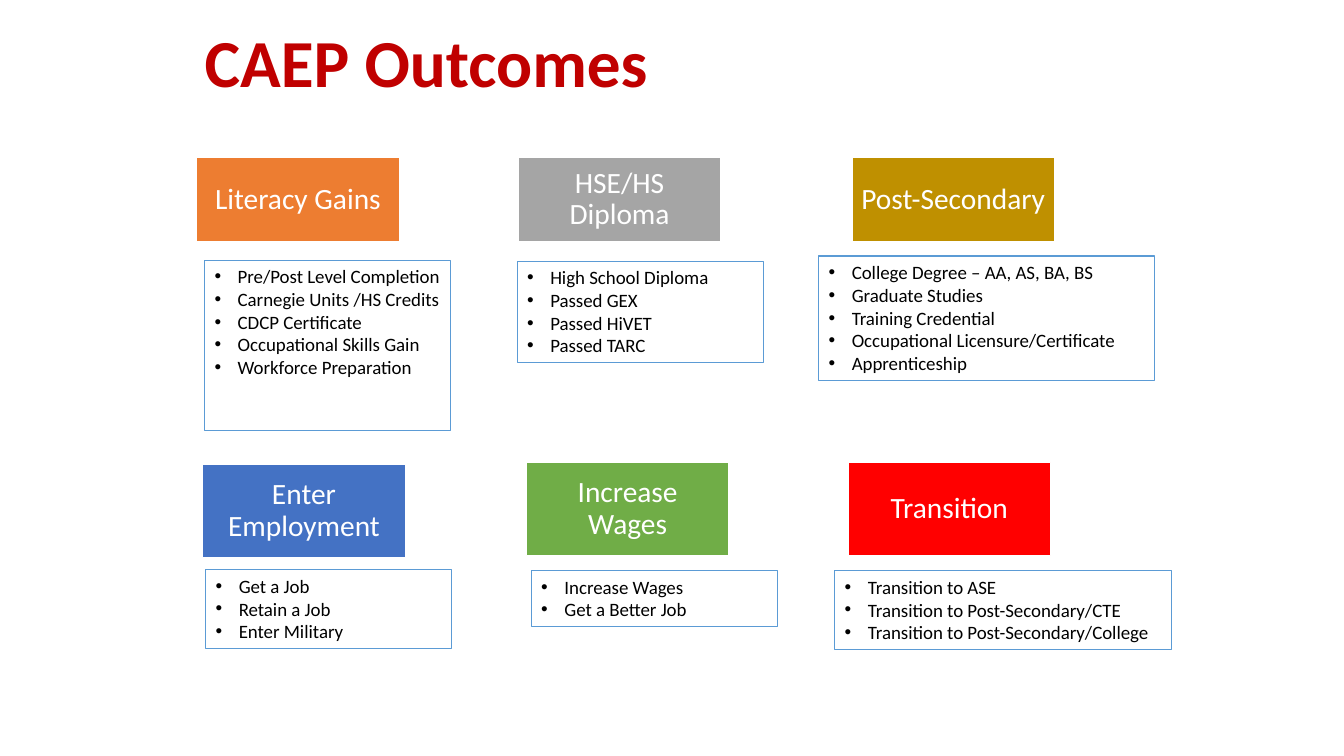
from dataclasses import dataclass

from lxml import etree
from pptx import Presentation
from pptx.dml.color import RGBColor
from pptx.enum.shapes import MSO_SHAPE
from pptx.enum.text import MSO_ANCHOR, MSO_AUTO_SIZE, PP_ALIGN
from pptx.oxml.ns import qn
from pptx.util import Inches, Pt

RECTANGLE = MSO_SHAPE.RECTANGLE
TOP, MIDDLE = MSO_ANCHOR.TOP, MSO_ANCHOR.MIDDLE
LEFT, CENTER = PP_ALIGN.LEFT, PP_ALIGN.CENTER
FIXED_SIZE = MSO_AUTO_SIZE.NONE

WHITE = RGBColor(0xFF, 0xFF, 0xFF)
BLACK = RGBColor(0x00, 0x00, 0x00)
DARK_RED = RGBColor(0xC0, 0x00, 0x00)
ORANGE = RGBColor(0xED, 0x7D, 0x31)
GRAY = RGBColor(0xA5, 0xA5, 0xA5)
GOLD = RGBColor(0xBF, 0x90, 0x00)
BLUE = RGBColor(0x44, 0x72, 0xC4)
GREEN = RGBColor(0x70, 0xAD, 0x47)
RED = RGBColor(0xFF, 0x00, 0x00)
LIGHT_BLUE = RGBColor(0x5B, 0x9B, 0xD5)

FONT = "Calibri"
HEADING_WIDTH = 2.01
BULLET_INDENT = Inches(0.23)


@dataclass(frozen=True)
class Area:
    left: float
    top: float
    width: float
    height: float


@dataclass(frozen=True)
class Outcome:
    heading: str
    color: RGBColor
    heading_area: Area
    measures: tuple[str, ...]
    list_area: Area


OUTCOMES = (
    Outcome("Literacy Gains", ORANGE, Area(1.95, 1.56, HEADING_WIDTH, 0.84),
            ("Pre/Post Level Completion", "Carnegie Units /HS Credits",
             "CDCP Certificate", "Occupational Skills Gain",
             "Workforce Preparation"),
            Area(2.03, 2.58, 2.44, 1.69)),
    Outcome("HSE/HS Diploma", GRAY, Area(5.14, 1.56, HEADING_WIDTH, 0.84),
            ("High School Diploma", "Passed GEX", "Passed HiVET",
             "Passed TARC"),
            Area(5.13, 2.59, 2.44, 1.01)),
    Outcome("Post-Secondary", GOLD, Area(8.45, 1.56, HEADING_WIDTH, 0.84),
            ("College Degree – AA, AS, BA, BS", "Graduate Studies",
             "Training Credential", "Occupational Licensure/Certificate",
             "Apprenticeship"),
            Area(8.12, 2.54, 3.33, 1.24)),
    Outcome("Enter Employment", BLUE, Area(2.01, 4.61, HEADING_WIDTH, 0.92),
            ("Get a Job", "Retain a Job", "Enter Military"),
            Area(2.04, 5.65, 2.44, 0.78)),
    Outcome("Increase Wages", GREEN, Area(5.22, 4.59, HEADING_WIDTH, 0.92),
            ("Increase Wages", "Get a Better Job"),
            Area(5.27, 5.66, 2.44, 0.56)),
    Outcome("Transition", RED, Area(8.41, 4.59, HEADING_WIDTH, 0.92),
            ("Transition to ASE", "Transition to Post-Secondary/CTE",
             "Transition to Post-Secondary/College"),
            Area(8.28, 5.66, 3.34, 0.78)),
)


def add_bullet(para) -> None:
    properties = para._p.get_or_add_pPr()
    properties.set("marL", str(BULLET_INDENT))
    properties.set("indent", str(-BULLET_INDENT))
    font = etree.SubElement(properties, qn("a:buFont"))
    font.set("typeface", "Arial")
    etree.SubElement(properties, qn("a:buChar")).set("char", "•")


def write_text(frame, lines: tuple[str, ...], *, size: float, color: RGBColor,
               bold: bool = False, align: int = LEFT, anchor: int = TOP,
               line_spacing: float = 1.0, bulleted: bool = False) -> None:
    frame.word_wrap = True
    frame.auto_size = FIXED_SIZE
    frame.vertical_anchor = anchor
    for index, line in enumerate(lines):
        para = frame.paragraphs[0] if index == 0 else frame.add_paragraph()
        para.alignment = align
        para.line_spacing = line_spacing
        if bulleted:
            add_bullet(para)
        span = para.add_run()
        span.text = line
        span.font.name = FONT
        span.font.size = Pt(size)
        span.font.bold = bold
        span.font.color.rgb = color


def place(shape, area: Area) -> None:
    shape.left, shape.top = Inches(area.left), Inches(area.top)
    shape.width, shape.height = Inches(area.width), Inches(area.height)


def add_box(page, area: Area, *, line: RGBColor, line_width: float,
            fill: RGBColor | None = None):
    box = page.shapes.add_shape(RECTANGLE, 0, 0, 0, 0)
    place(box, area)
    box.shadow.inherit = False
    if fill is None:
        box.fill.background()
    else:
        box.fill.solid()
        box.fill.fore_color.rgb = fill
    box.line.color.rgb = line
    box.line.width = Pt(line_width)
    return box


def add_outcome(page, outcome: Outcome) -> None:
    # Coloured heading
    heading = add_box(page, outcome.heading_area, fill=outcome.color,
                      line=WHITE, line_width=1)
    frame = heading.text_frame
    frame.margin_left = frame.margin_right = Inches(0.09)
    frame.margin_top = frame.margin_bottom = Inches(0.09)
    write_text(frame, (outcome.heading,), size=21, color=WHITE,
               align=CENTER, anchor=MIDDLE, line_spacing=0.9)

    # Outlined list of measures
    measures = add_box(page, outcome.list_area, line=LIGHT_BLUE,
                       line_width=0.75)
    write_text(measures.text_frame, outcome.measures, size=13.5, color=BLACK,
               bulleted=True)


def main() -> None:
    deck = Presentation()
    deck.slide_width, deck.slide_height = Inches(13.33), Inches(7.5)
    page = deck.slides.add_slide(deck.slide_layouts.get_by_name("Title Only"))

    # Title
    title = page.shapes.title
    place(title, Area(1.93, 0.38, 8.62, 0.55))
    write_text(title.text_frame, ("CAEP Outcomes",), size=48, color=DARK_RED,
               bold=True, anchor=MIDDLE, line_spacing=0.9)

    # Six outcomes with their measures
    for outcome in OUTCOMES:
        add_outcome(page, outcome)

    deck.save("out.pptx")


if __name__ == "__main__":
    main()
